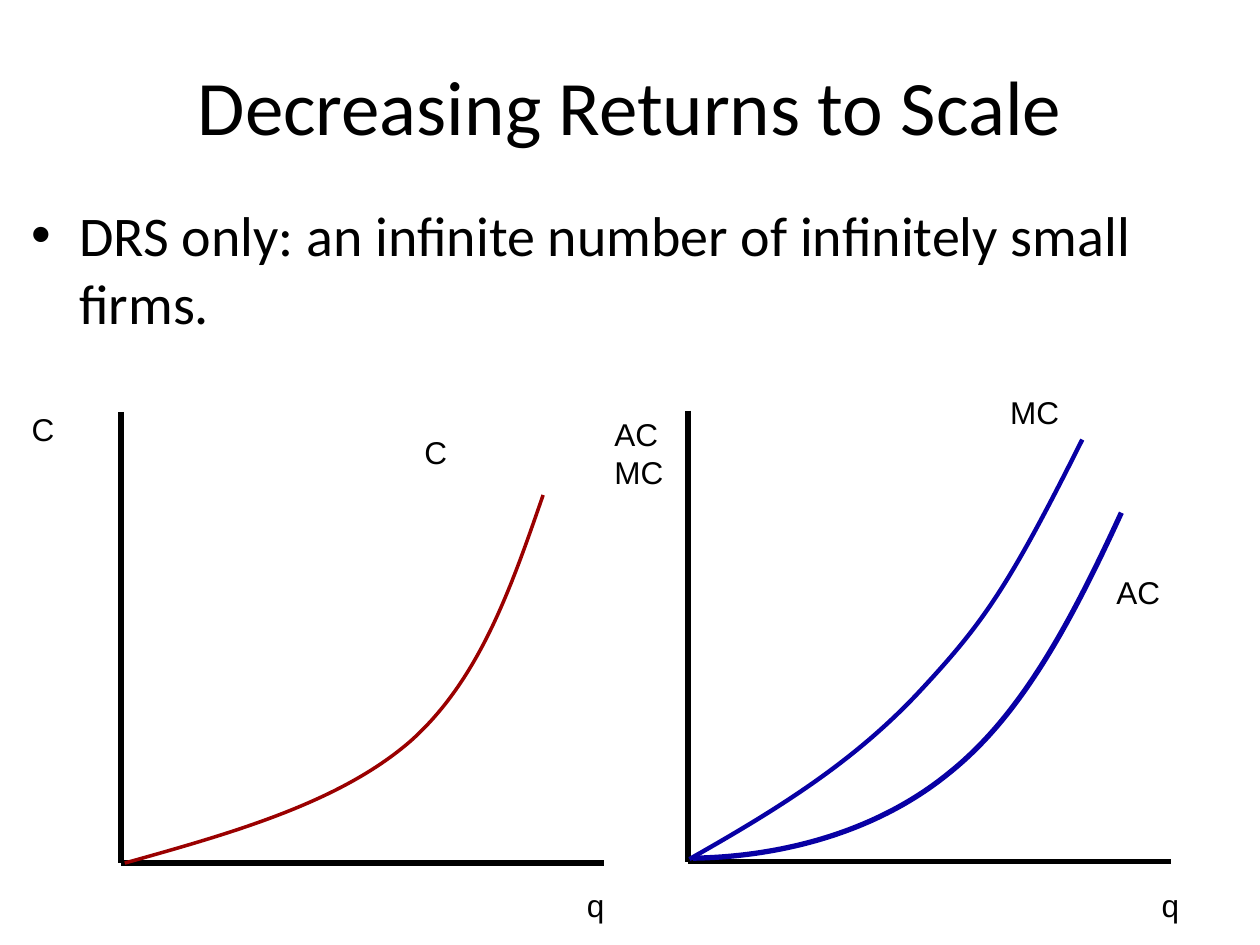
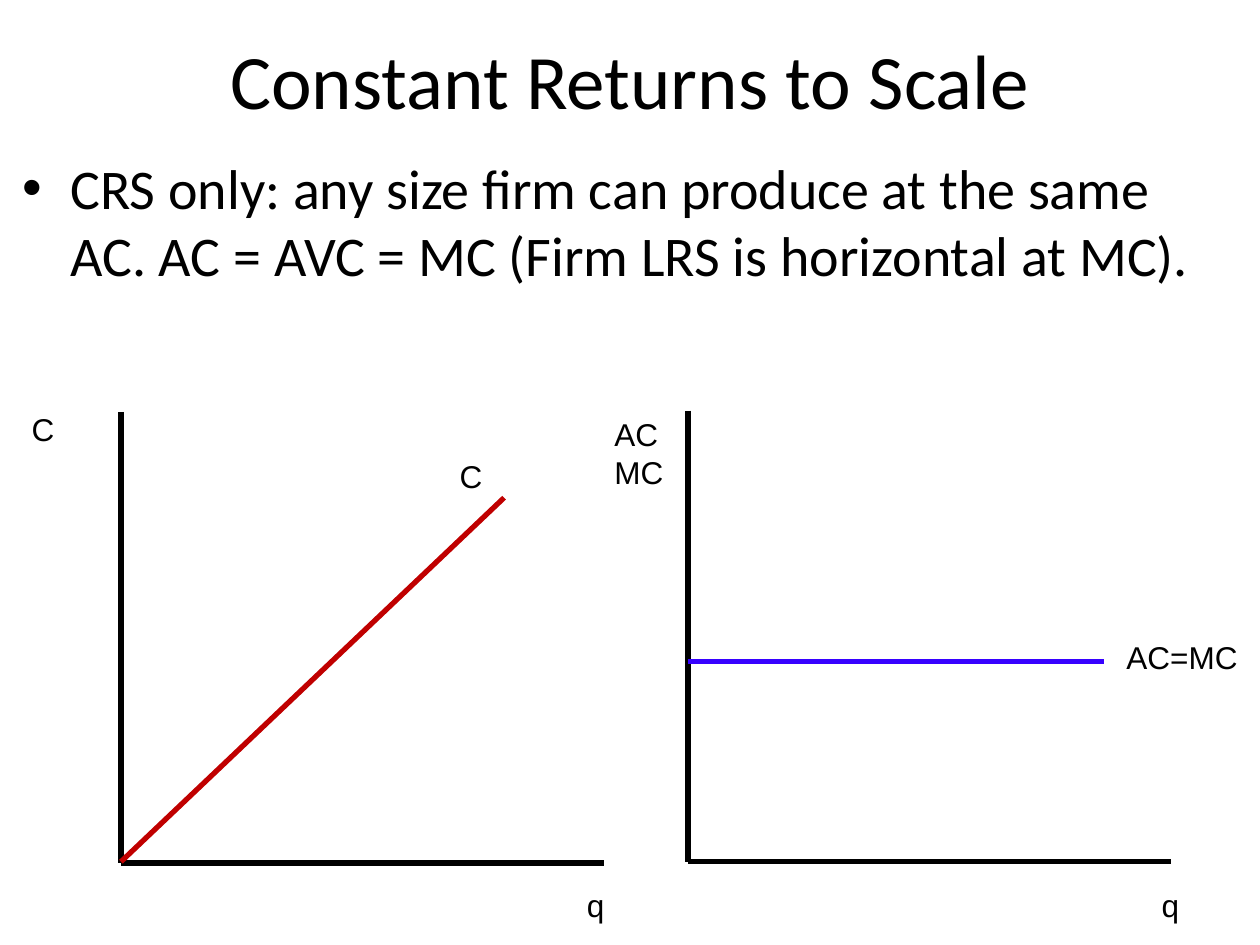
from lxml import etree
from pptx import Presentation
from pptx import util as u
from pptx.dml.color import RGBColor
from pptx.enum import shapes, text
from pptx.oxml.ns import qn

W, H = 10, 7.5
BLACK, DARK_RED, RED, NAVY, BLUE = "000000", "9A0000", "C00000", "0800A4", "3701FF"
AXIS_PT = 3

# Plot boxes in inches: left, top, width, height
COST_BOX = (0.96, 3.27, 3.83, 3.58)
UNIT_COST_BOX = (5.46, 3.26, 3.83, 3.58)

# Labels: text, left and top in percent of the plot from its origin, width in inches
COST_AXES = [("C", -21.1, 101.9, 0.38), ("q", 94, -3.7, 0.34)]
UNIT_COST_AXES = [("AC\nMC", -17.8, 100.5, 0.59), ("q", 95.6, -3.9, 0.34)]

# Bézier control points in percent of the plot
COST_CURVE = [(0.8, 0), (23.2, 6.7), (45.4, 13.4), (60.1, 27.1),
              (74.4, 40.8), (80.9, 61.2), (87.5, 81.6)]
MC_CURVE = [(0.3, 0.6), (18.3, 11.5), (33.9, 21.8), (47.5, 37.2),
            (61.1, 52.8), (66.1, 60.3), (81.7, 93.6)]
AC_CURVE = [(1, 0.8), (19.6, 1.1), (39.2, 6.7), (54, 19.6),
            (68.7, 32.1), (78.9, 52), (89.8, 77.4)]


def rgb(color):
    return RGBColor.from_string(color)


def share(left, top, width, height):
    """Box in inches from percentages of the slide's size."""
    return left * W / 100, top * H / 100, width * W / 100, height * H / 100


def add_text(s, box, words, size, font, wrap=True):
    sp = s.shapes.add_textbox(*(u.Inches(v) for v in box))
    tf = sp.text_frame
    tf.word_wrap = wrap
    tf.text = words
    for p in tf.paragraphs:
        for r in p.runs:
            r.font.size, r.font.name = u.Pt(size), font
            r.font.color.rgb = rgb(BLACK)
    return tf


def add_title(s, words, height):
    tf = add_text(s, share(5, 1.1, 90, height), words, 44, "Calibri")
    tf.vertical_anchor = text.MSO_ANCHOR.MIDDLE
    tf.paragraphs[0].alignment = text.PP_ALIGN.CENTER


def add_bullet(s, words, left, top, height):
    tf = add_text(s, share(left, top, 97.5, height), words, 32, "Calibri")
    pPr = tf.paragraphs[0]._p.get_or_add_pPr()
    pPr.set("marL", str(u.Inches(0.38)))
    pPr.set("indent", str(u.Inches(-0.38)))
    etree.SubElement(pPr, qn("a:buFont")).set("typeface", "Arial")
    etree.SubElement(pPr, qn("a:buChar")).set("char", "•")


def at(box, x, y):
    """Slide position in inches of a point given in percent from the plot's origin."""
    left, top, width, height = box
    return left + width * x / 100, top + height * (1 - y / 100)


def add_line(s, box, start, end, color, weight):
    ends = [u.Inches(v) for point in (start, end) for v in at(box, *point)]
    ln = s.shapes.add_connector(shapes.MSO_CONNECTOR.STRAIGHT, *ends)
    ln.line.color.rgb, ln.line.width = rgb(color), u.Pt(weight)
    etree.SubElement(ln._element.spPr, qn("a:effectLst"))


def add_curve(s, box, controls, color, weight):
    start, *rest = [tuple(u.Inches(v) for v in at(box, *point)) for point in controls]
    fb = s.shapes.build_freeform(*start)
    fb.add_line_segments(rest, close=False)
    sp = fb.convert_to_shape()
    # Every three straight segments become one cubic Bézier segment
    outline = sp._element.find(".//" + qn("a:path"))
    lines = outline.findall(qn("a:lnTo"))
    for i in range(0, len(lines), 3):
        cubic = etree.SubElement(outline, qn("a:cubicBezTo"))
        for line in lines[i:i + 3]:
            cubic.append(line[0])
            outline.remove(line)
    sp.shadow.inherit = False
    sp.fill.background()
    sp.line.color.rgb, sp.line.width = rgb(color), u.Pt(weight)


def add_plot(s, box, labels, curves):
    add_line(s, box, (0, 100), (0, 0), BLACK, AXIS_PT)
    add_line(s, box, (0, 0), (100, 0), BLACK, AXIS_PT)
    for words, x, y, width in labels:
        height = 0.4 + 0.31 * words.count("\n")
        tf = add_text(s, (*at(box, x, y), width, height), words, 18, "Arial", wrap=False)
        tf.auto_size = text.MSO_AUTO_SIZE.SHAPE_TO_FIT_TEXT
    for points, color, weight in curves:
        if len(points) == 2:
            add_line(s, box, *points, color, weight)
        else:
            add_curve(s, box, points, color, weight)


def decreasing_returns(s):
    add_title(s, "Decreasing Returns to Scale", 20)
    add_bullet(s, "DRS only: an infinite number of infinitely small firms.",
               1.5, 20.6, 77.7)
    add_plot(s, COST_BOX, COST_AXES + [("C", 60.3, 96.7, 0.38)],
             [(COST_CURVE, DARK_RED, 2)])
    add_plot(s, UNIT_COST_BOX,
             UNIT_COST_AXES + [("AC", 86.2, 65.4, 0.55), ("MC", 64.2, 105.3, 0.59)],
             [(MC_CURVE, NAVY, 2.5), (AC_CURVE, NAVY, 3)])


def constant_returns(s):
    add_title(s, "Constant Returns to Scale", 14.4)
    add_bullet(s, "CRS only: any size firm can produce at the same AC. "
                  "AC = AVC = MC (Firm LRS is horizontal at MC).", 0.8, 15.6, 83.3)
    add_plot(s, COST_BOX, COST_AXES + [("C", 67.6, 91.3, 0.39)],
             [([(0, 0.3), (79.4, 81)], RED, 3)])
    add_plot(s, UNIT_COST_BOX, UNIT_COST_AXES + [("AC=MC", 88.3, 50.9, 1.09)],
             [([(0, 44.4), (86.2, 44.4)], BLUE, 3)])


def main():
    prs = Presentation()
    prs.slide_width, prs.slide_height = u.Inches(W), u.Inches(H)
    for build in (decreasing_returns, constant_returns):
        build(prs.slides.add_slide(prs.slide_layouts[6]))
    prs.save("out.pptx")


if __name__ == "__main__":
    main()
